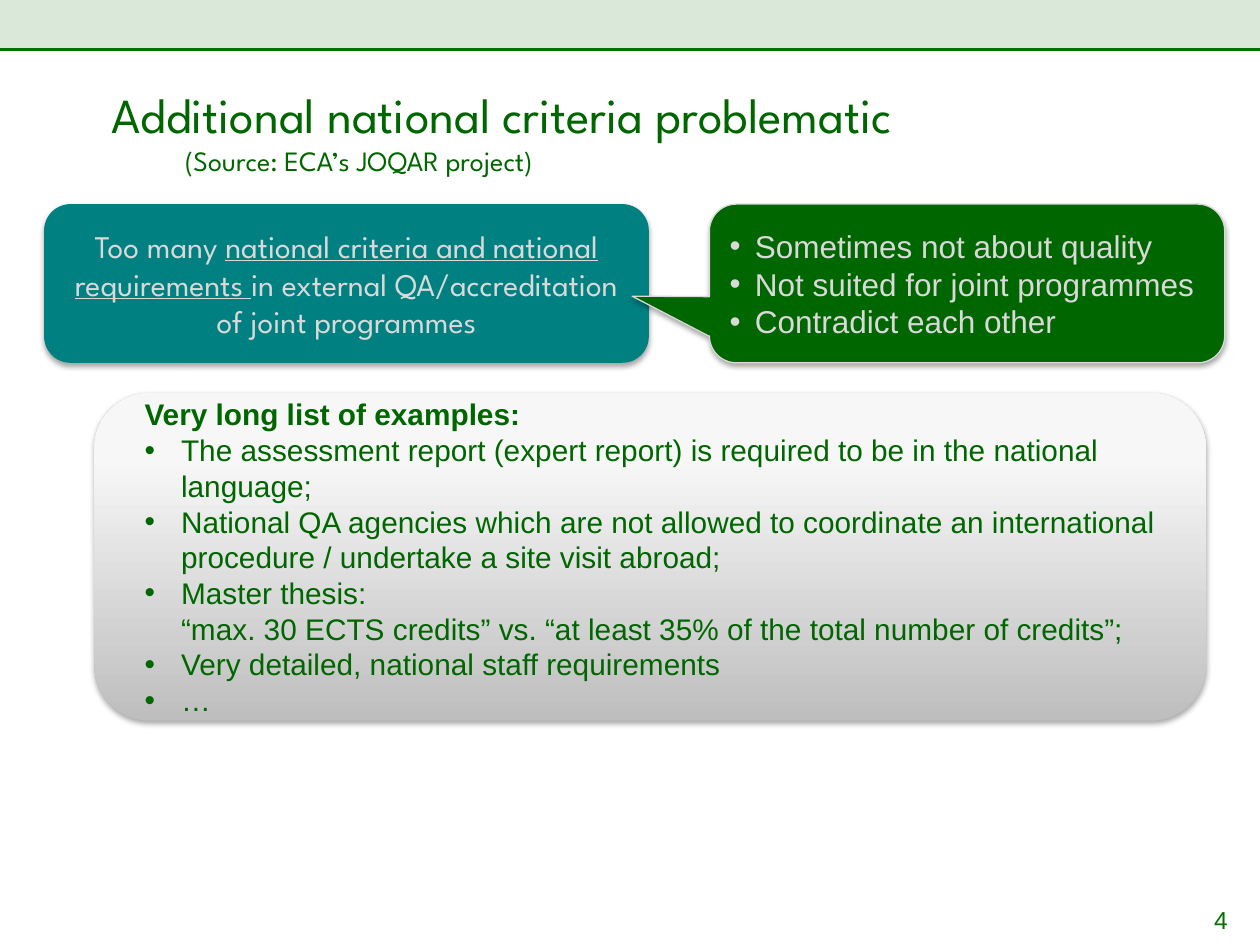
from typing import NamedTuple, Optional

from lxml.etree import SubElement
from pptx import Presentation
from pptx.dml.color import RGBColor
from pptx.enum.shapes import MSO_CONNECTOR, MSO_SHAPE
from pptx.enum.text import MSO_ANCHOR, PP_ALIGN
from pptx.oxml.ns import qn
from pptx.util import Inches, Pt

GREEN, RULE, TEAL, PALE = "006600", "007000", "008080", "D9D9D9"
HEAD_FONT, BODY_FONT = "League Spartan", "Arial"


class Run(NamedTuple):
    text: str
    size: float
    bold: bool = False
    under: bool = False


class Para(NamedTuple):
    runs: list[Run]
    indent: float = 0
    bullet: bool = False
    align: Optional[PP_ALIGN] = None
    space: Optional[Pt] = None


class Panel(NamedTuple):
    kind: MSO_SHAPE
    box: tuple[float, float, float, float]
    fill: Optional[str]  # None gives the grey gradient
    line: Optional[str]
    paras: list[Para]
    font: str
    ink: str
    inset: float
    left: float = 0.1


def tint(color, code: str) -> None:
    color.rgb = RGBColor.from_string(code)


def node(parent, tag: str, **attrs):
    return SubElement(parent, qn(tag), {k: str(v) for k, v in attrs.items()})


def write(frame, paras: list[Para], font: str, ink: str) -> None:
    frame.word_wrap = True
    for i, item in enumerate(paras):
        para = frame.paragraphs[0] if i == 0 else frame.add_paragraph()
        props = para._p.get_or_add_pPr()
        if item.indent:
            props.set("marL", str(Inches(item.indent)))
            props.set("indent", str(-Inches(item.indent)))
        if item.bullet:
            node(props, "a:buFont", typeface="Arial")
            node(props, "a:buChar", char="•")
        para.alignment = item.align or PP_ALIGN.LEFT
        para.line_spacing = item.space
        for part in item.runs:
            for j, text in enumerate(part.text.split("\n")):
                if j:
                    para.add_line_break()
                if text:
                    run = para.add_run()
                    run.text = text
                    run.font.name = font
                    run.font.size = Pt(part.size)
                    run.font.bold = part.bold
                    run.font.underline = part.under
                    tint(run.font.color, ink)


def add_text(slide, box, paras: list[Para], font: str, ink: str) -> None:
    frame = slide.shapes.add_textbox(*map(Inches, box)).text_frame
    write(frame, paras, font, ink)


def shade(shape) -> None:
    """Fill from dark grey at the foot to near white at the top."""
    shape.fill.gradient()
    grad = shape._element.spPr.find(qn("a:gradFill"))
    stops = grad.find(qn("a:gsLst"))
    for old in list(stops):
        stops.remove(old)
    for pos, code in ((0, "BEBEBE"), (80, "F7F7F7"), (100, "F8F8F8")):
        node(node(stops, "a:gs", pos=pos * 1000), "a:srgbClr", val=code)
    shape.fill.gradient_angle = 90


def add_panel(slide, panel: Panel):
    shape = slide.shapes.add_shape(panel.kind, *map(Inches, panel.box))
    if panel.fill:
        shape.fill.solid()
        tint(shape.fill.fore_color, panel.fill)
    else:
        shade(shape)
    if panel.line:
        tint(shape.line.color, panel.line)
        shape.line.width = Pt(0.75)
    else:
        shape.line.fill.background()
    # Soft shadow below
    shape.shadow.inherit = False
    effects = shape._element.spPr.find(qn("a:effectLst"))
    glow = node(effects, "a:outerShdw", blurRad=Pt(3.1), dist=Pt(1.8),
                dir=90 * 60000, rotWithShape=0)
    node(node(glow, "a:srgbClr", val="000000"), "a:alpha", val=35000)
    frame = shape.text_frame
    frame.vertical_anchor = MSO_ANCHOR.MIDDLE
    frame.margin_top = frame.margin_bottom = Inches(panel.inset)
    frame.margin_left = Inches(panel.left)
    write(frame, panel.paras, panel.font, panel.ink)
    return shape


def add_band(slide) -> None:
    band = slide.shapes.add_shape(MSO_SHAPE.RECTANGLE, 0, 0, Inches(10), Inches(0.4))
    band.shadow.inherit = False
    band.fill.solid()
    tint(band.fill.fore_color, GREEN)
    color = band._element.spPr.find(qn("a:solidFill"))[0]
    node(color, "a:alpha", val=15000)
    band.line.fill.background()
    rule = slide.shapes.add_connector(
        MSO_CONNECTOR.STRAIGHT, 0, Inches(0.39), Inches(10), Inches(0.39))
    tint(rule.line.color, RULE)
    rule.line.width = Pt(1.75)
    node(rule._element.spPr, "a:effectLst")


def points(texts: list[str], size: float, indent: float) -> list[Para]:
    return [Para([Run(t, size)], indent, True) for t in texts]


CLAIM = Panel(
    MSO_SHAPE.ROUNDED_RECTANGLE, (0.35, 1.62, 4.8, 1.26), TEAL, None,
    [Para([Run("Too many ", 18),
           Run("national criteria and national requirements ", 18, under=True),
           Run("in external QA/accreditation of joint programmes", 18)],
          align=PP_ALIGN.CENTER)],
    HEAD_FONT, PALE, 0.08)

CASES = Panel(
    MSO_SHAPE.ROUNDED_RECTANGLE, (0.75, 3.12, 8.82, 2.6), None, None,
    [Para([Run("Very long list of examples:", 17, bold=True)])]
    + points([
        "The assessment report (expert report) is required to be in the "
        "national language;",
        "National QA agencies which are not allowed to coordinate an "
        "international procedure / undertake a site visit abroad;",
        "Master thesis: \n“max. 30 ECTS credits” vs. “at least 35% of the "
        "total number of credits”;",
        "Very detailed, national staff requirements",
        "…"], 17, 0.29),
    BODY_FONT, GREEN, 0.08, left=0.27)

FLAWS = Panel(
    MSO_SHAPE.ROUNDED_RECTANGULAR_CALLOUT, (5.63, 1.62, 4.09, 1.26), GREEN, PALE,
    points(["Sometimes not about quality",
            "Not suited for joint programmes",
            "Contradict each other"], 18, 0.2),
    BODY_FONT, PALE, 0.05)


def main() -> None:
    deck = Presentation()
    deck.slide_width, deck.slide_height = Inches(10), Inches(7.5)
    slide = deck.slides.add_slide(deck.slide_layouts[6])

    # Top band and page number
    add_band(slide)
    add_text(slide, (9.38, 7.03, 0.62, 0.47),
             [Para([Run("4", 14)], 0.2, align=PP_ALIGN.CENTER, space=Pt(24))],
             BODY_FONT, RULE)

    # Title
    add_text(slide, (0.79, 0.62, 8.74, 0.47),
             [Para([Run("Additional national criteria problematic \n", 28),
                    Run("(Source: ECA’s JOQAR project)", 16)], 0.58)],
             HEAD_FONT, GREEN)

    # Panels, with the callout pointing at the claim
    add_panel(slide, CLAIM)
    add_panel(slide, CASES)
    flaws = add_panel(slide, FLAWS)
    for i, value in enumerate((-0.65, 0.08, 0.17)):
        flaws.adjustments[i] = value

    deck.save("out.pptx")


if __name__ == "__main__":
    main()
